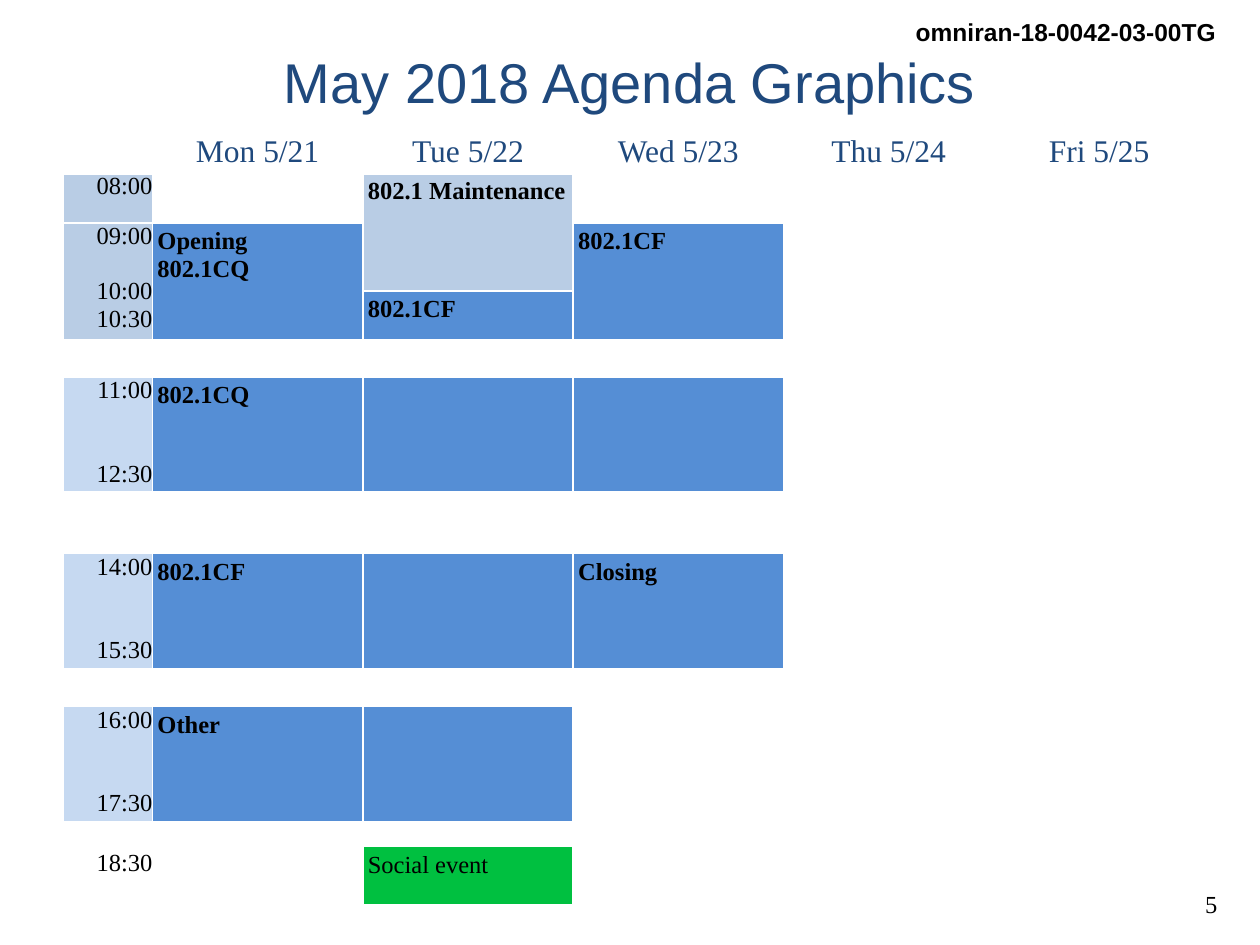
from pptx import Presentation
from pptx.util import Inches, Pt
from pptx.dml.color import RGBColor
from pptx.enum.text import PP_ALIGN, MSO_ANCHOR
from pptx.oxml import parse_xml
from pptx.oxml.ns import nsdecls

# Content
TITLE = "May 2018 Agenda Graphics"
DOC = "omniran-18-0042-03-00TG"
PAGE = "5"
DAYS = ["Mon 5/21", "Tue 5/22", "Wed 5/23", "Thu 5/24", "Fri 5/25"]
# row: fill, then (time, blank lines before it)
TIMES = {
    1: ("mist", [("08:00", 0)]),
    2: ("mist", [("09:00", 0), ("10:00", 1), ("10:30", 0)]),
    5: ("pale", [("11:00", 0), ("12:30", 2)]),
    8: ("pale", [("14:00", 0), ("15:30", 2)]),
    10: ("pale", [("16:00", 0), ("17:30", 2)]),
    11: ("white", [("18:30", 0)]),
}
# row, column, fill, lines of text
SLOTS = [
    (1, 2, "mist", ["802.1 Maintenance"]),
    (2, 1, "blue", ["Opening", "802.1CQ"]),
    (2, 3, "blue", ["802.1CF"]),
    (3, 2, "blue", ["802.1CF"]),
    (5, 1, "blue", ["802.1CQ"]), (5, 2, "blue", []), (5, 3, "blue", []),
    (8, 1, "blue", ["802.1CF"]), (8, 2, "blue", []),
    (8, 3, "blue", ["Closing"]),
    (10, 1, "blue", ["Other"]), (10, 2, "blue", []),
    (12, 2, "green", ["Social event"]),
]
# first row, last row: columns merged over those rows
SPANS = {
    (1, 2): [2], (2, 3): [0, 1, 3, 4], (2, 5): [5], (6, 7): range(5),
    (7, 10): [5], (8, 10): [4], (11, 13): [0, 1, 3, 4],
    (11, 12): [5], (12, 13): [2],
}

# Style and grid, in inches
HUES = {"white": "FFFFFF", "black": "000000", "navy": "1F497D",
        "mist": "B9CDE5", "pale": "C6D9F1", "blue": "558ED5",
        "green": "00C040"}
SERIF, SANS = "Times New Roman", "Arial"
WIDE, HIGH = 10, 7.5
COLS = [0.71] + [1.67] * len(DAYS)
ROWS = [0.29, 0.4, 0.54, 0.35, 0.3, 0.89, 0.3, 0.19, 0.89, 0.3, 0.89,
        0.2, 0.23, 0.23]
LEFT, TOP = 0.05 * WIDE, 1.07
LINE = 16  # points per line of time text


def hue(name):
    return RGBColor.from_string(HUES[name])


def write(frame, text, size=14, font=SERIF, color="black", bold=False,
          align=PP_ALIGN.LEFT, gap=0, first=True):
    par = frame.paragraphs[0] if first else frame.add_paragraph()
    par.alignment = align
    par.space_before = Pt(gap)
    run = par.add_run()
    run.text = text
    run.font.size, run.font.name, run.font.bold = Pt(size), font, bold
    run.font.color.rgb = hue(color)


def label(slide, box, text, foot=0.05, **style):
    frame = slide.shapes.add_textbox(*map(Inches, box)).text_frame
    frame.word_wrap = True
    frame.margin_left = 0 if style["align"] == PP_ALIGN.RIGHT else Inches(0.1)
    frame.margin_bottom = Inches(foot)
    frame.vertical_anchor = MSO_ANCHOR.MIDDLE
    write(frame, text, **style)


def paint(cell, name):
    cell.fill.solid()
    cell.fill.fore_color.rgb = hue(name)


def pad(cell, inch):
    cell.margin_left = cell.margin_right = Inches(inch)
    cell.margin_top = cell.margin_bottom = Inches(inch)


def edge(cell, head):
    for i, side in enumerate("LRTB"):
        width = Pt(3 if head and side == "B" else 1)
        line = parse_xml(
            f'<a:ln{side} {nsdecls("a")} w="{width}"><a:solidFill>'
            f'<a:srgbClr val="{HUES["white"]}"/></a:solidFill></a:ln{side}>')
        cell._tc.get_or_add_tcPr().insert(i, line)


def build(slide):
    grid = slide.shapes.add_table(
        len(ROWS), len(COLS), Inches(LEFT), Inches(TOP),
        Inches(sum(COLS)), Inches(sum(ROWS))).table
    grid.first_row = grid.horz_banding = False
    for col, width in zip(grid.columns, COLS):
        col.width = Inches(width)
    for row, height in zip(grid.rows, ROWS):
        row.height = Inches(height)

    # Plain white cells, with small type so short rows keep their height
    for r in range(len(ROWS)):
        for c in range(len(COLS)):
            cell = grid.cell(r, c)
            paint(cell, "white")
            pad(cell, 0)
            edge(cell, r == 0)
            par = cell.text_frame.paragraphs[0]
            par._p.get_or_add_endParaRPr().set("sz", "600")
    for (start, end), cols in SPANS.items():
        for c in cols:
            grid.cell(start, c).merge(grid.cell(end, c))

    # Days, times and sessions
    for c, day in enumerate(DAYS, 1):
        write(grid.cell(0, c).text_frame, day, size=18, color="navy",
              align=PP_ALIGN.CENTER)
    for r, (fill, times) in TIMES.items():
        cell = grid.cell(r, 0)
        paint(cell, fill)
        for i, (time, skip) in enumerate(times):
            write(cell.text_frame, time, align=PP_ALIGN.RIGHT,
                  gap=skip * LINE, first=i == 0)
    grid.cell(11, 0).vertical_anchor = MSO_ANCHOR.MIDDLE
    for r, c, fill, lines in SLOTS:
        cell = grid.cell(r, c)
        paint(cell, fill)
        pad(cell, 0.04)
        for i, text in enumerate(lines):
            write(cell.text_frame, text, bold=fill != "green", first=i == 0)


def main():
    deck = Presentation()
    deck.slide_width, deck.slide_height = Inches(WIDE), Inches(HIGH)
    slide = deck.slides.add_slide(deck.slide_layouts[6])
    # Header, page number and title
    label(slide, (7.16, 0.08, 2.59, 0.34), DOC, font=SANS, bold=True,
          align=PP_ALIGN.RIGHT)
    label(slide, (9.33, 7, 0.43, 0.34), PAGE, align=PP_ALIGN.RIGHT)
    label(slide, (LEFT, 0.3, 0.9 * WIDE, 0.78), TITLE, foot=0.14, size=32,
          font=SANS, color="navy", align=PP_ALIGN.CENTER)
    build(slide)
    deck.save("out.pptx")


if __name__ == "__main__":
    main()
